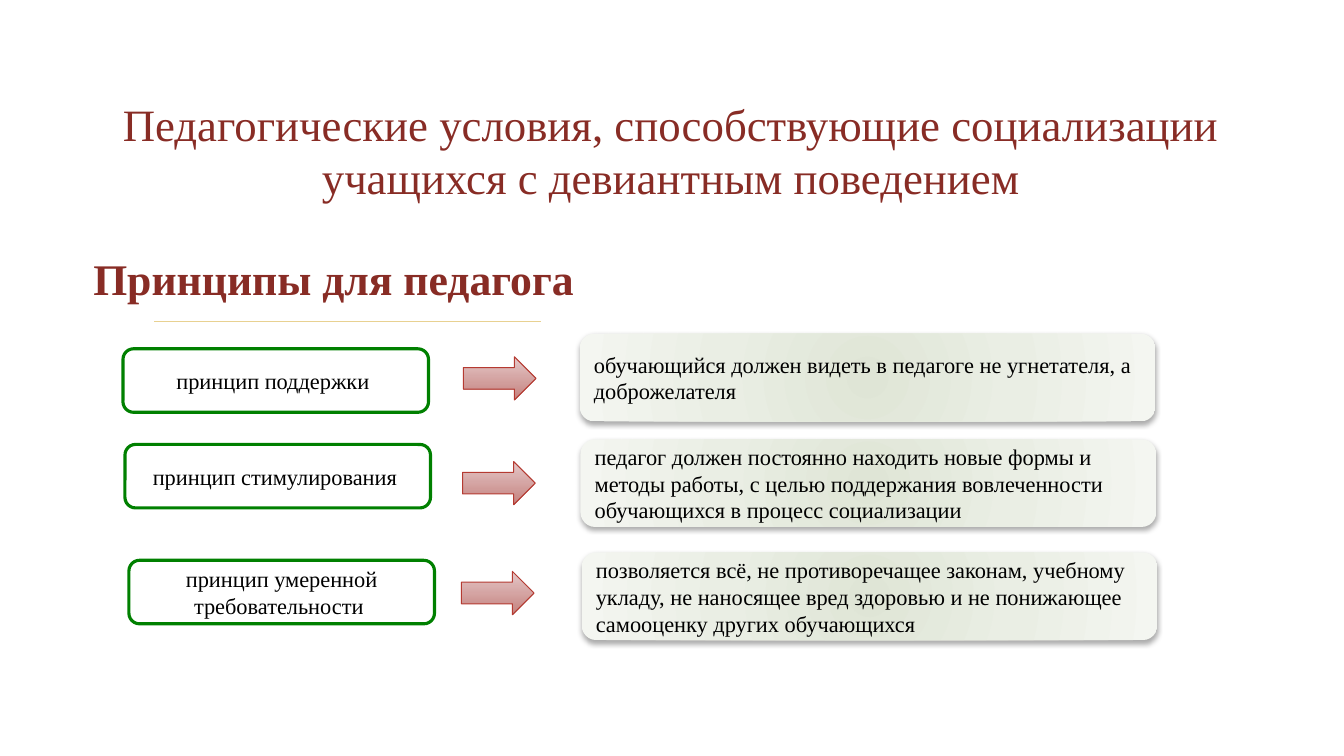
"""Slide on the teacher's principles for socialising pupils with deviant behaviour."""
from dataclasses import dataclass

from lxml import etree
from pptx import Presentation
from pptx import util as u
from pptx.dml.color import RGBColor
from pptx.enum import shapes, text
from pptx.oxml import ns, parse_xml


@dataclass(frozen=True)
class Theme:
    font: str = "Times New Roman"
    heading: str = "882C25"
    body: str = "000000"
    rule: str = "E8D191"
    box_fill: str = "FFFFFF"
    box_line: str = "008000"
    arrow_line: str = "B53A31"
    arrow_stops: tuple = ((0, "E4C8C8"), (100, "C5817E"))
    card_stops: tuple = ((0, "DFE5D6"), (50, "EAEEE4"), (100, "F4F6F1"))
    shadow: str = "000000"
    title_size: float = 32
    subtitle_size: float = 31.2
    body_size: float = 16


T = Theme()
RADIAL = ('<a:path path="circle"><a:fillToRect l="50000" t="50000" '
          'r="50000" b="50000"/></a:path>')
DOWNWARD = '<a:lin ang="5400000" scaled="0"/>'


def write(sp, words, size, color, align, anchor, bold=False):
    """Put one formatted run into a shape."""
    tf = sp.text_frame
    tf.word_wrap = True
    tf.vertical_anchor = anchor
    p = tf.paragraphs[0]
    p.alignment = align
    r = p.add_run()
    r.text = words
    r.font.name = T.font
    r.font.size = u.Pt(size)
    r.font.bold = bold
    r.font.color.rgb = RGBColor.from_string(color)


def add_shape(kind, box, stops=None, direction="", fill=None, line=None, width=0):
    """Add a preset shape with a gradient or plain fill and an optional outline."""
    sp = s.shapes.add_shape(kind, *map(u.Cm, box))
    sp.shadow.inherit = False
    if stops:
        marks = "".join(f'<a:gs pos="{pos * 1000}"><a:srgbClr val="{color}"/></a:gs>'
                        for pos, color in stops)
        grad = parse_xml(f'<a:gradFill {ns.nsdecls("a")} rotWithShape="1">'
                         f'<a:gsLst>{marks}</a:gsLst>{direction}</a:gradFill>')
        sp._element.spPr.find(ns.qn("a:prstGeom")).addnext(grad)
    else:
        sp.fill.solid()
        sp.fill.fore_color.rgb = RGBColor.from_string(fill)
    if line:
        sp.line.color.rgb = RGBColor.from_string(line)
        sp.line.width = u.Pt(width)
    else:
        sp.line.fill.background()
    return sp


prs = Presentation()
prs.slide_width, prs.slide_height = u.Cm(33.87), u.Cm(19.05)
s = prs.slides.add_slide(prs.slide_layouts[6])

rule = s.shapes.add_connector(shapes.MSO_CONNECTOR.STRAIGHT,
                              u.Cm(3.89), u.Cm(8.1), u.Cm(13.64), u.Cm(8.1))
rule.line.color.rgb = RGBColor.from_string(T.rule)
rule.line.width = u.Pt(1.25)
etree.SubElement(rule._element.spPr, ns.qn("a:effectLst"))

headings = [
    ((1.52, 1.45, 30.78, 3.81), T.title_size, False,
     "Педагогические условия, способствующие социализации учащихся с девиантным поведением"),
    ((1.52, 5.82, 13.77, 1.96), T.subtitle_size, True, "Принципы для педагога"),
]
for box, size, bold, words in headings:
    sp = s.shapes.add_textbox(*map(u.Cm, box))
    write(sp, words, size, T.heading, text.PP_ALIGN.CENTER, text.MSO_ANCHOR.BOTTOM, bold)

rows = [
    ((3.1, 8.79), (11.68, 8.99), (14.61, 8.41), "принцип поддержки ",
     "обучающийся должен видеть в педагоге не угнетателя, а доброжелателя"),
    ((3.15, 11.2), (11.66, 11.63), (14.63, 11.07), "принцип стимулирования ",
     "педагог должен постоянно находить новые формы и методы работы, с целью "
     "поддержания вовлеченности обучающихся в процесс социализации"),
    ((3.25, 14.12), (11.63, 14.4), (14.66, 13.92), "принцип умеренной требовательности ",
     "позволяется всё, не противоречащее законам, учебному укладу, не наносящее "
     "вред здоровью и не понижающее самооценку других обучающихся"),
]
for box_at, arrow_at, card_at, principle, meaning in rows:
    sp = add_shape(shapes.MSO_SHAPE.ROUNDED_RECTANGLE, (*box_at, 7.7, 1.6),
                   fill=T.box_fill, line=T.box_line, width=2.25)
    write(sp, principle, T.body_size, T.body, text.PP_ALIGN.CENTER, text.MSO_ANCHOR.MIDDLE)

    card = add_shape(shapes.MSO_SHAPE.ROUNDED_RECTANGLE, (*card_at, 14.51, 2.21),
                     T.card_stops, RADIAL)
    card._element.spPr.find(ns.qn("a:effectLst")).append(parse_xml(
        f'<a:outerShdw {ns.nsdecls("a")} blurRad="{u.Pt(3.5)}" dist="{u.Pt(2.2)}" '
        f'dir="5400000" rotWithShape="0"><a:srgbClr val="{T.shadow}">'
        '<a:alpha val="32000"/></a:srgbClr></a:outerShdw>'))
    write(card, meaning, T.body_size, T.body, text.PP_ALIGN.LEFT, text.MSO_ANCHOR.MIDDLE)

    add_shape(shapes.MSO_SHAPE.RIGHT_ARROW, (*arrow_at, 1.83, 1.09),
              T.arrow_stops, DOWNWARD, line=T.arrow_line, width=0.75)

prs.save("out.pptx")
